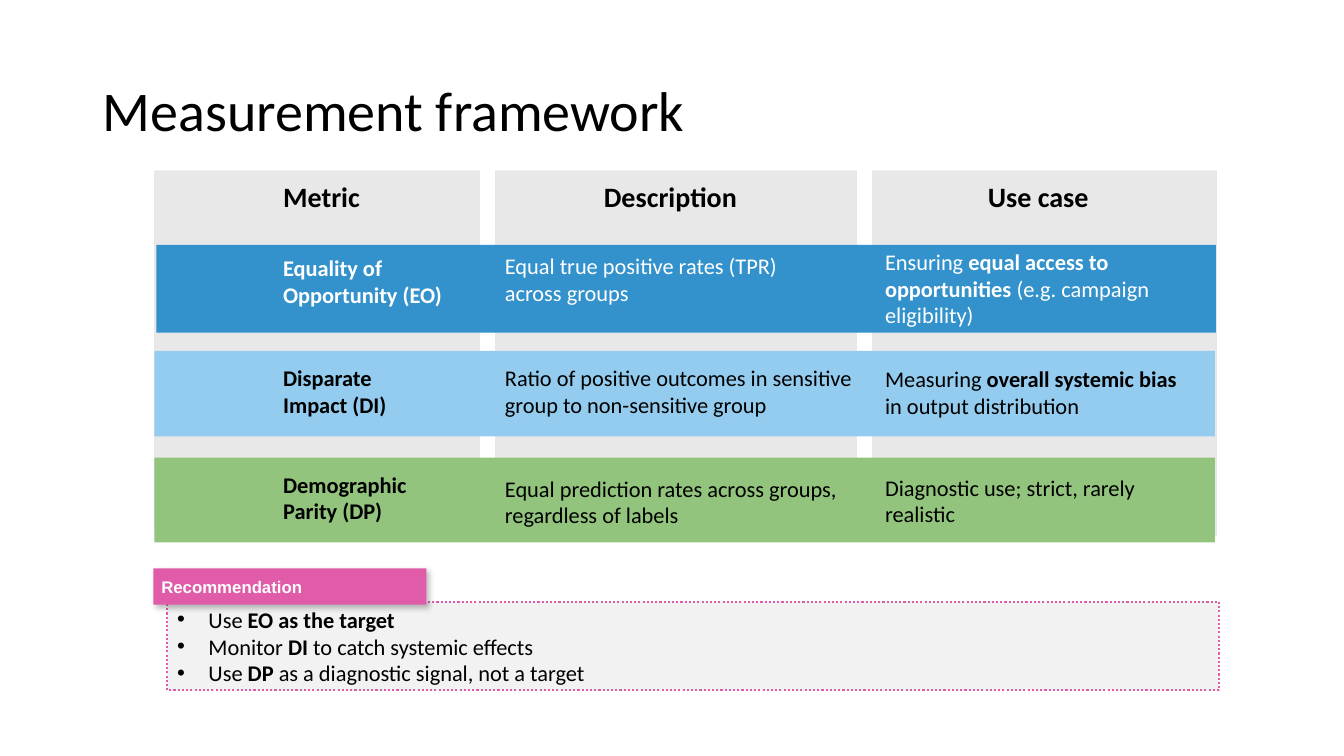
from lxml import etree
from pptx import Presentation
from pptx.dml.color import RGBColor
from pptx.enum.dml import MSO_LINE
from pptx.enum.shapes import MSO_SHAPE
from pptx.enum.text import MSO_ANCHOR, MSO_AUTO_SIZE, PP_ALIGN
from pptx.oxml.ns import qn
from pptx.util import Inches, Pt

RECT = MSO_SHAPE.RECTANGLE
MID = MSO_ANCHOR.MIDDLE
TOP = MSO_ANCHOR.TOP
GROW = MSO_AUTO_SIZE.SHAPE_TO_FIT_TEXT
FIXED = MSO_AUTO_SIZE.NONE
LEFT = PP_ALIGN.LEFT
DOTS = MSO_LINE.ROUND_DOT

BLACK, WHITE, PINK = "000000", "FFFFFF", "E05CA9"


def color(code):
    return RGBColor.from_string(code)


class Board:
    font = "Calibri"

    def __init__(self, deck):
        self.slide = deck.slides.add_slide(deck.slide_layouts[5])
        self.shapes = self.slide.shapes

    def group(self):
        self.shapes = self.slide.shapes.add_group_shape().shapes

    def ungroup(self):
        self.shapes = self.slide.shapes

    def fill_text(self, shape, lines, size, ink=BLACK, font=None, bullet=False):
        frame = shape.text_frame
        frame.word_wrap = True
        for i, line in enumerate(lines):
            para = frame.paragraphs[0] if i == 0 else frame.add_paragraph()
            para.alignment = LEFT
            if bullet:
                self.bullet(para)
            for j, part in enumerate(line.split("*")):
                if not part:
                    continue
                run = para.add_run()
                run.text = part
                run.font.name = font or self.font
                run.font.size = Pt(size)
                run.font.bold = j % 2 == 1
                run.font.color.rgb = color(ink)
        return frame

    def bullet(self, para):
        props = para._p.get_or_add_pPr()
        props.set("marL", str(Inches(0.31)))
        props.set("indent", str(-Inches(0.31)))
        tint = etree.SubElement(props, qn("a:buClr"))
        etree.SubElement(tint, qn("a:srgbClr"), val=BLACK)
        etree.SubElement(props, qn("a:buFont"), typeface="Arial")
        etree.SubElement(props, qn("a:buChar"), char="•")

    def title(self, text, x, y, w, h):
        shape = self.slide.shapes.title
        shape.left, shape.top = Inches(x), Inches(y)
        shape.width, shape.height = Inches(w), Inches(h)
        frame = self.fill_text(shape, [text], 40)
        frame.auto_size = FIXED
        frame.vertical_anchor = MID
        frame.paragraphs[0].line_spacing = 0.9

    def rect(self, x, y, w, h, fill):
        shape = self.shapes.add_shape(
            RECT, Inches(x), Inches(y), Inches(w), Inches(h))
        shape.shadow.inherit = False
        shape.fill.solid()
        shape.fill.fore_color.rgb = color(fill)
        shape.line.fill.background()
        return shape

    def label(self, lines, x, y, w, h, size, ink=BLACK):
        box = self.shapes.add_textbox(
            Inches(x), Inches(y), Inches(w), Inches(h))
        self.fill_text(box, lines, size, ink).auto_size = GROW

    def panel(self, lines, x, y, w, h):
        shape = self.rect(x, y, w, h, "F2F2F2")
        shape.line.color.rgb = color(PINK)
        shape.line.width = Pt(1.5)
        shape.line.dash_style = DOTS
        self.fill_text(shape, lines, 16, bullet=True).vertical_anchor = MID

    def tag(self, text, x, y, w, h):
        shape = self.rect(x, y, w, h, PINK)
        effects = shape._element.spPr.find(qn("a:effectLst"))
        shade = etree.SubElement(
            effects, qn("a:outerShdw"), blurRad=str(Pt(4)),
            dist=str(Pt(3)), dir="2700000", algn="tl", rotWithShape="0")
        tint = etree.SubElement(shade, qn("a:srgbClr"), val=BLACK)
        etree.SubElement(tint, qn("a:alpha"), val="25000")
        frame = self.fill_text(shape, [text], 12, WHITE, "Arial")
        frame.vertical_anchor = TOP
        frame.auto_size = GROW
        frame.margin_left = frame.margin_right = Inches(0.08)
        frame.margin_top = frame.margin_bottom = Inches(0.08)


COLUMNS = [
    ("*Metric*", 1.53, 3.23, 3.61, 2.71, 2.96),
    ("*Description*", 4.91, 3.59, 3.59, 5.89, 3.29),
    ("*Use case*", 8.65, 3.42, 3.63, 9.7, 3.12),
]
BANDS = [
    (1.55, 2.43, 10.51, 0.87, "3392CC"),
    (1.53, 3.48, 10.52, 0.85, "93CCEF"),
    (1.53, 4.54, 10.52, 0.84, "93C47D"),
]
CELL_X = [2.71, 4.91, 8.68]
ROWS = [
    (WHITE, [
        (["*Equality of*", "*Opportunity (EO)*"], 2.47, 3.12, 0.64),
        (["Equal true positive rates (TPR) across groups"], 2.45, 3.4, 0.64),
        (["Ensuring *equal access to*", "*opportunities* (e.g. campaign",
          "eligibility)"], 2.41, 4.14, 0.91),
    ]),
    (BLACK, [
        (["*Disparate*", "*Impact (DI)*"], 3.56, 3.12, 0.64),
        (["Ratio of positive outcomes in sensitive group to "
          "non-sensitive group"], 3.56, 3.65, 0.91),
        (["Measuring *overall systemic bias* in output distribution"],
         3.57, 3.12, 0.71),
    ]),
    (BLACK, [
        (["*Demographic*", "*Parity (DP)*"], 4.62, 3.12, 0.64),
        (["Equal prediction rates across groups, regardless of labels"],
         4.66, 3.52, 0.64),
        (["Diagnostic use; strict, rarely realistic"], 4.65, 3.12, 0.71),
    ]),
]
ADVICE = [
    "Use *EO as the target*",
    "Monitor *DI* to catch systemic effects",
    "Use *DP* as a diagnostic signal, not a target",
]


def main():
    deck = Presentation()
    deck.slide_width, deck.slide_height = Inches(13.33), Inches(7.5)
    board = Board(deck)
    board.title("Measurement framework", 0.92, 0.4, 11.5, 1.45)
    board.group()
    for _, x, w, h, _, _ in COLUMNS:
        board.rect(x, 1.69, w, h, "E8E8E8")
    for band in BANDS:
        board.rect(*band)
    for head, _, _, _, x, w in COLUMNS:
        board.label([head], x, 1.73, w, 0.48, 20)
    for ink, cells in ROWS:
        for x, (lines, y, w, h) in zip(CELL_X, cells):
            board.label(lines, x, y, w, h, 16, ink)
    board.ungroup()
    board.panel(ADVICE, 1.66, 5.97, 10.43, 0.88)
    board.tag("*Recommendation*", 1.52, 5.64, 2.71, 0.36)
    deck.save("out.pptx")


if __name__ == "__main__":
    main()
